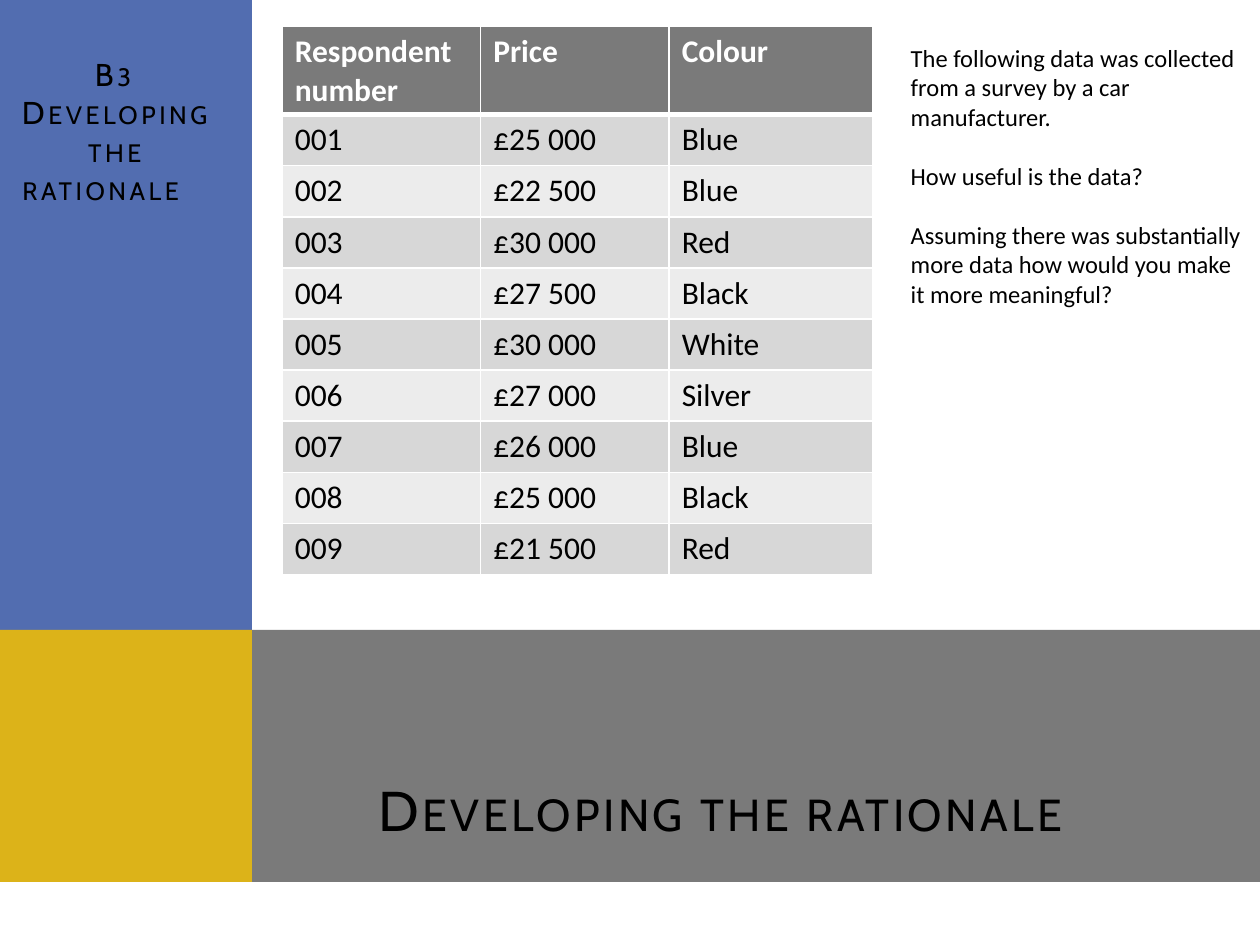
import dataclasses

import lxml.etree
import pptx
import pptx.dml.color
import pptx.enum.shapes
import pptx.enum.text
import pptx.oxml.ns
import pptx.util

Cm = pptx.util.Cm
Pt = pptx.util.Pt
qn = pptx.oxml.ns.qn
Align = pptx.enum.text.PP_ALIGN


@dataclasses.dataclass
class Theme:
    blue: str = "526DB0"
    gold: str = "F5C201"
    grey: str = "7A7A7A"
    bands: tuple = ("D7D7D7", "ECECEC")
    ink: str = "000000"
    white: str = "FFFFFF"
    head: str = "Cabin"
    body: str = "Calibri"
    title: int = 32
    cell: int = 18
    side: int = 18
    note: int = 14
    gap: int = 17


class Deck:
    """Draws styled elements on the current slide."""

    def __init__(self, theme):
        self.theme = theme
        self.prs = pptx.Presentation()
        self.prs.slide_width, self.prs.slide_height = Cm(25.4), Cm(19.05)
        self.slide = self.prs.slides.add_slide(self.prs.slide_layouts[5])

    def paint(self, fill, color):
        fill.solid()
        fill.fore_color.rgb = pptx.dml.color.RGBColor.from_string(color)

    def style(self, para, face, size, color, bold=False, caps=False):
        font = para.font
        font.name, font.size, font.bold = face, Pt(size), bold
        self.paint(font.fill, color)
        if caps:
            font._rPr.set("cap", "small")
            font._rPr.set("spc", "200")

    def panel(self, x, y, w, h, color, alpha=None):
        kind = pptx.enum.shapes.MSO_SHAPE.RECTANGLE
        shape = self.slide.shapes.add_shape(kind, Cm(x), Cm(y), Cm(w), Cm(h))
        shape.shadow.inherit = False
        shape.line.fill.background()
        self.paint(shape.fill, color)
        if alpha:
            tone = shape._element.spPr.find(".//" + qn("a:srgbClr"))
            lxml.etree.SubElement(tone, qn("a:alpha"), val=str(alpha * 1000))

    def title(self, text, x, y, w, h):
        shape = self.slide.shapes.title
        self.slide.shapes._spTree.append(shape._element)
        shape.left, shape.top, shape.width, shape.height = Cm(x), Cm(y), Cm(w), Cm(h)
        frame = shape.text_frame
        frame.text = text
        frame.vertical_anchor = pptx.enum.text.MSO_ANCHOR.BOTTOM
        para = frame.paragraphs[0]
        para.alignment = Align.CENTER
        self.style(para, self.theme.head, self.theme.title, self.theme.ink, caps=True)

    def text(self, lines, x, y, w, h, face, size, align=Align.LEFT, gap=0, caps=False):
        frame = self.slide.shapes.add_textbox(Cm(x), Cm(y), Cm(w), Cm(h)).text_frame
        frame.word_wrap = True
        frame.text = "\n".join(lines)
        for i, para in enumerate(frame.paragraphs):
            para.alignment = align
            para.space_before = Pt(gap if i else 0)
            self.style(para, face, size, self.theme.ink, caps=caps)

    def border(self, cell, under):
        props = cell._tc.get_or_add_tcPr()
        for i, (side, width) in enumerate(zip("LRTB", (1, 1, 1, under))):
            line = lxml.etree.Element(qn("a:ln" + side), w=str(Pt(width)))
            fill = lxml.etree.SubElement(line, qn("a:solidFill"))
            lxml.etree.SubElement(fill, qn("a:srgbClr"), val=self.theme.white)
            props.insert(i, line)

    def table(self, rows, x, y, widths, top, height):
        theme = self.theme
        total = top + height * (len(rows) - 1)
        table = self.slide.shapes.add_table(
            len(rows), len(widths), Cm(x), Cm(y), Cm(sum(widths)), Cm(total)).table
        for col, width in zip(table.columns, widths):
            col.width = Cm(width)
        for r, row in enumerate(rows):
            head = r == 0
            table.rows[r].height = Cm(top if head else height)
            for c, value in enumerate(row):
                cell = table.cell(r, c)
                cell.text = value
                self.paint(cell.fill, theme.grey if head else theme.bands[(r - 1) % 2])
                self.border(cell, 3 if head or r == 0 else 1)
                self.style(cell.text_frame.paragraphs[0], theme.body, theme.cell,
                           theme.white if head else theme.ink, bold=head)


def main():
    theme = Theme()
    deck = Deck(theme)
    deck.panel(0, 0, 5.08, 17.78, theme.blue)
    deck.panel(0, 12.7, 25.4, 5.08, theme.grey)
    deck.panel(0, 12.7, 5.08, 5.08, theme.gold, alpha=80)
    deck.title("Developing the rationale", 5.26, 12.73, 20.24, 4.39)
    deck.text(["B3", "Developing the rationale"], 0, 0.99, 4.7, 3.33,
              theme.head, theme.side, Align.CENTER, caps=True)

    sales = [("£25 000", "Blue"), ("£22 500", "Blue"), ("£30 000", "Red"),
             ("£27 500", "Black"), ("£30 000", "White"), ("£27 000", "Silver"),
             ("£26 000", "Blue"), ("£25 000", "Black"), ("£21 500", "Red")]
    rows = [("Respondent number", "Price", "Colour")]
    rows += [(f"{n:03}", *sale) for n, sale in enumerate(sales, 1)]
    deck.table(rows, 5.69, 0.53, (4, 3.8, 4.11), 1.78, 1.03)

    deck.text(["The following data was collected from a survey by a car manufacturer.",
               "How useful is the data?",
               "Assuming there was substantially more data how would you make it "
               "more meaningful?"],
              18.11, 0.74, 7.29, 5.64, theme.body, theme.note, gap=theme.gap)
    deck.prs.save("out.pptx")


if __name__ == "__main__":
    main()
